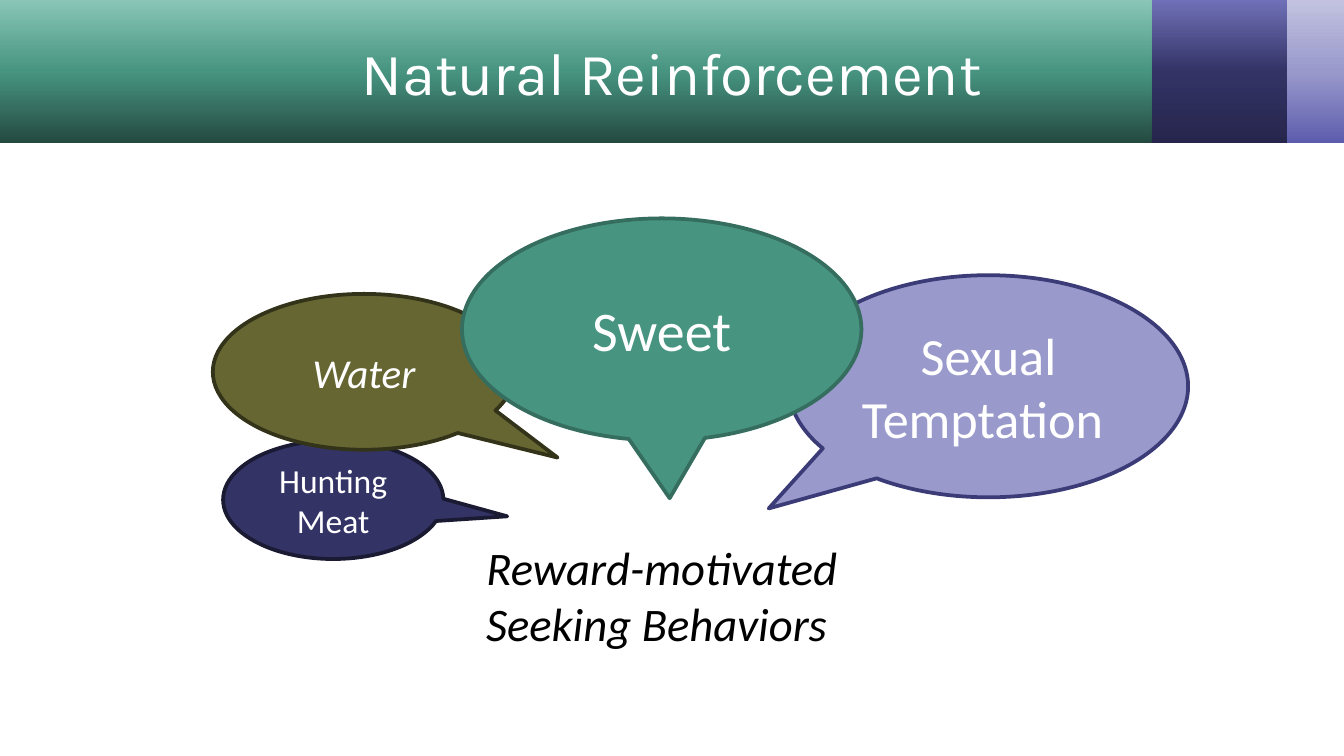
from copy import deepcopy

from pptx import Presentation
from pptx.dml.color import RGBColor
from pptx.enum.shapes import MSO_SHAPE
from pptx.enum.text import MSO_ANCHOR, MSO_AUTO_SIZE, PP_ALIGN
from pptx.oxml.ns import qn
from pptx.util import Pt

RECT = MSO_SHAPE.RECTANGLE
CALLOUT = MSO_SHAPE.OVAL_CALLOUT
CENTER = PP_ALIGN.CENTER
MIDDLE = MSO_ANCHOR.MIDDLE
NO_AUTOFIT = MSO_AUTO_SIZE.NONE
FIT_SHAPE = MSO_AUTO_SIZE.SHAPE_TO_FIT_TEXT

WHITE = RGBColor(0xFF, 0xFF, 0xFF)
BLACK = RGBColor(0x00, 0x00, 0x00)
GREEN = RGBColor(0x47, 0x94, 0x81)
GREEN_DARK = RGBColor(0x24, 0x4A, 0x40)
GREEN_LIGHT = RGBColor(0x89, 0xC6, 0xB7)
GREEN_LINE = RGBColor(0x35, 0x6D, 0x5F)
NAVY = RGBColor(0x33, 0x33, 0x66)
NAVY_DARK = RGBColor(0x26, 0x26, 0x4D)
NAVY_LIGHT = RGBColor(0x70, 0x70, 0xB8)
NAVY_LINE = RGBColor(0x1A, 0x1A, 0x33)
LILAC = RGBColor(0x99, 0x99, 0xCC)
LILAC_DARK = RGBColor(0x5D, 0x5D, 0xAE)
LILAC_LIGHT = RGBColor(0xC2, 0xC2, 0xE0)
LILAC_LINE = RGBColor(0x3B, 0x3B, 0x77)
OLIVE = RGBColor(0x66, 0x66, 0x33)
OLIVE_LINE = RGBColor(0x33, 0x33, 0x1A)


class Deck:
    """Holds the style and the current slide; lengths are in points."""

    title_font = "Karla"
    body_font = "Calibri"
    line_width = 2

    def __init__(self, width, height):
        self.prs = Presentation()
        self.prs.slide_width, self.prs.slide_height = Pt(width), Pt(height)
        self.s = self.prs.slides.add_slide(self.prs.slide_layouts[5])

    def set_text(self, sp, text, size, color=WHITE, font=body_font, italic=False):
        tf = sp.text_frame
        tf.text = text
        tf.word_wrap = True
        p = tf.paragraphs[0]
        p.alignment = CENTER
        f = p.runs[0].font
        f.name, f.size, f.italic = font, Pt(size), italic
        f.color.rgb = color
        return tf

    def shape(self, kind, box):
        sp = self.s.shapes.add_shape(kind, *map(Pt, box))
        sp.shadow.inherit = False
        return sp

    def band(self, left, width, height, colors):
        """Draw a header band whose gradient runs upwards through three colors."""
        sp = self.shape(RECT, (left, 0, width, height))
        sp.line.fill.background()
        sp.fill.gradient()
        sp.fill.gradient_angle = 90
        gs = next(sp._element.iter(qn("a:gs")))
        gs.addnext(deepcopy(gs))
        for stop, position, color in zip(sp.fill.gradient_stops, (0, 0.5, 1), colors):
            stop.position = position
            stop.color.rgb = color

    def title(self, text, box, size):
        sp = self.s.shapes.title
        sp.left, sp.top, sp.width, sp.height = map(Pt, box)
        tf = self.set_text(sp, text, size, font=self.title_font)
        tf.vertical_anchor = MIDDLE
        tf.auto_size = NO_AUTOFIT
        self.s.shapes._spTree.append(sp._element)  # in front of the bands

    def callout(self, text, box, tip, size, fill, line, italic=False):
        """Draw a speech bubble; tip is its offset from the centre in box sizes."""
        sp = self.shape(CALLOUT, box)
        sp.adjustments[0], sp.adjustments[1] = tip
        sp.fill.solid()
        sp.fill.fore_color.rgb = fill
        sp.line.color.rgb = line
        sp.line.width = Pt(self.line_width)
        self.set_text(sp, text, size, italic=italic).vertical_anchor = MIDDLE

    def caption(self, text, box, size):
        sp = self.s.shapes.add_textbox(*map(Pt, box))
        self.set_text(sp, text, size, BLACK, italic=True).auto_size = FIT_SHAPE


def main():
    deck = Deck(720, 405)

    band_height = 76.5
    deck.band(679, 41.5, band_height, (LILAC_DARK, LILAC, LILAC_LIGHT))
    deck.band(614, 75.5, band_height, (NAVY_DARK, NAVY, NAVY_LIGHT))
    deck.band(0, 617, band_height, (GREEN_DARK, GREEN, GREEN_LIGHT))
    deck.title("Natural Reinforcement", (36, 4.5, 648, 67.5), 32)

    big_w, big_h = 214, 119
    center_left = 247.5
    deck.callout("Sexual Temptation ", (422.5, 147.5, big_w, big_h),
                 (-0.55, 0.55), 28, LILAC, LILAC_LINE)
    deck.callout("Hunting Meat", (119.5, 236, 118, 63.5),
                 (0.79, 0.14), 18, NAVY, NAVY_LINE)
    deck.callout("Water", (114, 157.5, 162, 83.5),
                 (0.64, 0.55), 22, OLIVE, OLIVE_LINE, italic=True)
    deck.callout("Sweet", (center_left, 117, big_w, big_h),
                 (0.02, 0.76), 30, GREEN, GREEN_LINE)
    deck.caption("Reward-motivated Seeking Behaviors ",
                 (center_left, 285, big_w, 67.5), 25)

    deck.prs.save("out.pptx")


if __name__ == "__main__":
    main()
